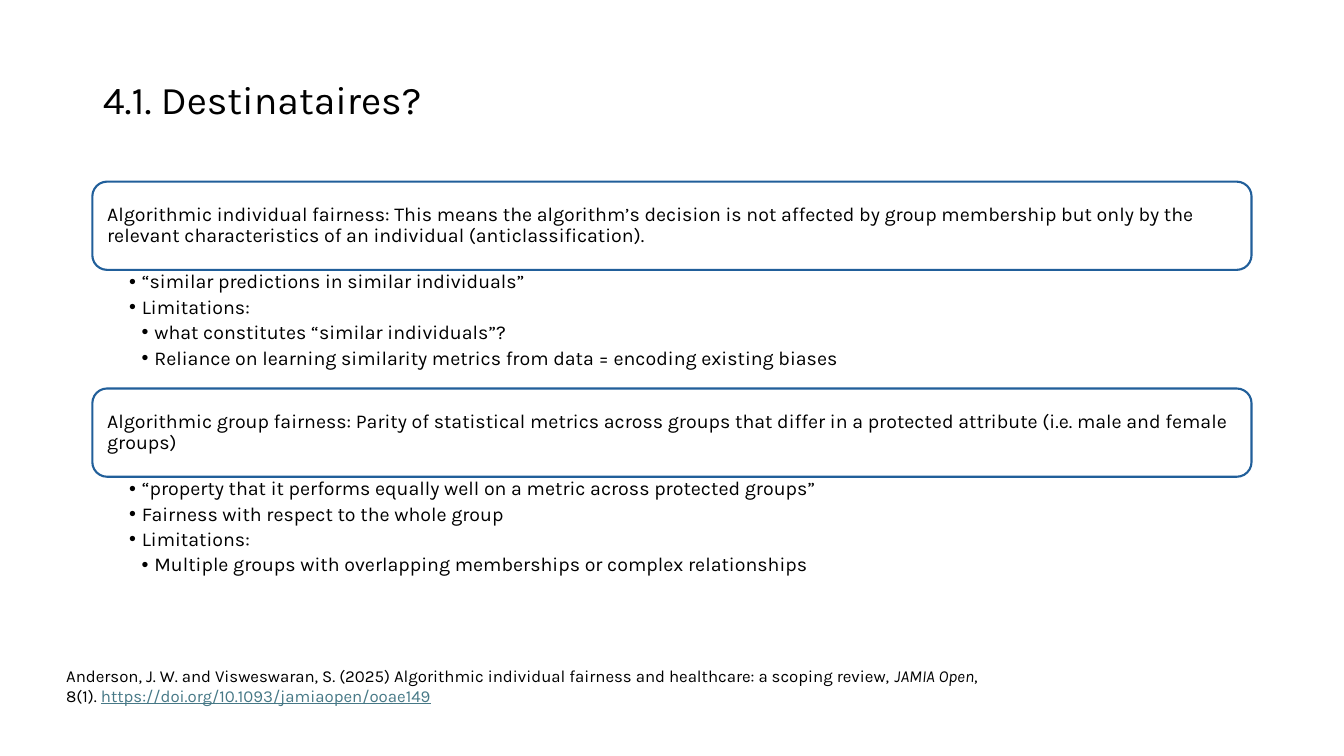
from lxml.etree import SubElement
from pptx import Presentation
from pptx.dml.color import RGBColor
from pptx.enum.shapes import MSO_SHAPE
from pptx.enum.text import MSO_ANCHOR, MSO_AUTO_SIZE, PP_ALIGN
from pptx.oxml.ns import qn
from pptx.util import Emu, Pt

PX = 9525  # EMU per px, 96 px to the inch
COLORS = {"text": "000000", "border": "215F9A", "link": "467886"}
FONT = "Karla"
NBSP = chr(160)

HEADING_HEIGHT = 84
LIST_HEIGHT = 113
BULLET_STEP = 12

CONCEPTS = [
    (
        "Algorithmic individual fairness: This means the algorithm’s decision is not affected "
        "by group membership but only by the relevant characteristics of an individual "
        "(anticlassification).",
        [
            (1, "“similar predictions in similar individuals”"),
            (1, "Limitations:"),
            (2, "what constitutes “similar individuals”?"),
            (2, "Reliance on learning similarity metrics from data = encoding existing biases"),
        ],
    ),
    (
        "Algorithmic group fairness: Parity of statistical metrics across groups that differ "
        "in a protected attribute (i.e. male and female groups)",
        [
            (1, "“property that it performs equally well on a metric across protected groups”"),
            (1, "Fairness with respect to the whole group"),
            (1, "Limitations:"),
            (2, "Multiple groups with overlapping memberships or complex relationships"),
        ],
    ),
]

CITATION = [
    ("Anderson, J. W. and Visweswaran, S. (2025) Algorithmic individual fairness and "
     f"healthcare: a scoping review,{NBSP}", {}),
    ("JAMIA Open", {"italic": True}),
    (f", 8(1).{NBSP}", {}),
    ("https://doi.org/10.1093/jamiaopen/ooae149", {"underline": True, "color": "link"}),
]


def px(length):
    return Emu(length * PX)


def rgb(name):
    return RGBColor.from_string(COLORS[name])


def set_all(target, **values):
    for name, value in values.items():
        setattr(target, name, value)


def place(shape, left, top, width, height):
    set_all(shape, left=px(left), top=px(top), width=px(width), height=px(height))


def set_frame(frame, anchor, margins):
    """Fix wrapping and anchor; margins are left, top, right, bottom in px."""
    sides = ("margin_left", "margin_top", "margin_right", "margin_bottom")
    set_all(frame, word_wrap=True, auto_size=MSO_AUTO_SIZE.NONE, vertical_anchor=anchor,
            **{side: px(margin) for side, margin in zip(sides, margins)})


def add_run(paragraph, text, size, color="text", **styles):
    run = paragraph.add_run()
    run.text = text
    set_all(run.font, name=FONT, size=Pt(size), **styles)
    run.font.color.rgb = rgb(color)


def add_bullet(paragraph, level):
    properties = paragraph._p.get_or_add_pPr()
    properties.set("marL", str(px(level * BULLET_STEP)))
    properties.set("indent", str(px(-BULLET_STEP)))
    SubElement(properties, qn("a:buFont")).set("typeface", "Arial")
    SubElement(properties, qn("a:buChar")).set("char", "•")


def fill_title(title, box):
    place(title, *box)
    set_frame(title.text_frame, MSO_ANCHOR.MIDDLE, (10, 5, 10, 5))
    line = title.text_frame.paragraphs[0]
    set_all(line, alignment=PP_ALIGN.LEFT, line_spacing=0.9)
    add_run(line, "4.1. Destinataires?", 28)


def add_heading(slide, text, box):
    heading = slide.shapes.add_shape(MSO_SHAPE.ROUNDED_RECTANGLE, *map(px, box))
    heading.shadow.inherit = False
    heading.fill.background()
    heading.line.color.rgb = rgb("border")
    heading.line.width = Pt(1.5)
    set_frame(heading.text_frame, MSO_ANCHOR.MIDDLE, (10, 10, 10, 10))
    definition = heading.text_frame.paragraphs[0]
    set_all(definition, alignment=PP_ALIGN.LEFT, line_spacing=0.9)
    add_run(definition, text, 14)


def fill_list(body, points, box):
    place(body, *box)
    frame = body.text_frame
    set_frame(frame, MSO_ANCHOR.TOP, (35, 2, 10, 2))
    for index, (level, text) in enumerate(points):
        point = frame.add_paragraph() if index else frame.paragraphs[0]
        add_bullet(point, level)
        set_all(point, level=level, alignment=PP_ALIGN.LEFT, line_spacing=0.9,
                space_before=Pt(0), space_after=Pt(3))
        add_run(point, text, 14)


def add_concept(slide, body, concept, box):
    """Stack a framed definition over its bullet list."""
    left, top, width = box
    definition, points = concept
    add_heading(slide, definition, (left, top, width, HEADING_HEIGHT))
    fill_list(body, points, (left, top + HEADING_HEIGHT, width, LIST_HEIGHT))


def add_citation(slide, box):
    citation = slide.shapes.add_textbox(*map(px, box))
    set_frame(citation.text_frame, MSO_ANCHOR.TOP, (10, 5, 10, 5))
    for text, styles in CITATION:
        add_run(citation.text_frame.paragraphs[0], text, 12, **styles)


def main():
    deck = Presentation()
    set_all(deck, slide_width=px(1280), slide_height=px(720))
    slide = deck.slides.add_slide(deck.slide_layouts.get_by_name("Two Content"))
    title, *bodies = slide.placeholders

    fill_title(title, (88, 62, 1104, 70))
    for index, (body, concept) in enumerate(zip(bodies, CONCEPTS)):
        top = 173 + index * (HEADING_HEIGHT + LIST_HEIGHT)
        add_concept(slide, body, concept, (88, top, 1104))
    add_citation(slide, (53, 629, 1208, 48))
    deck.save("out.pptx")


if __name__ == "__main__":
    main()
